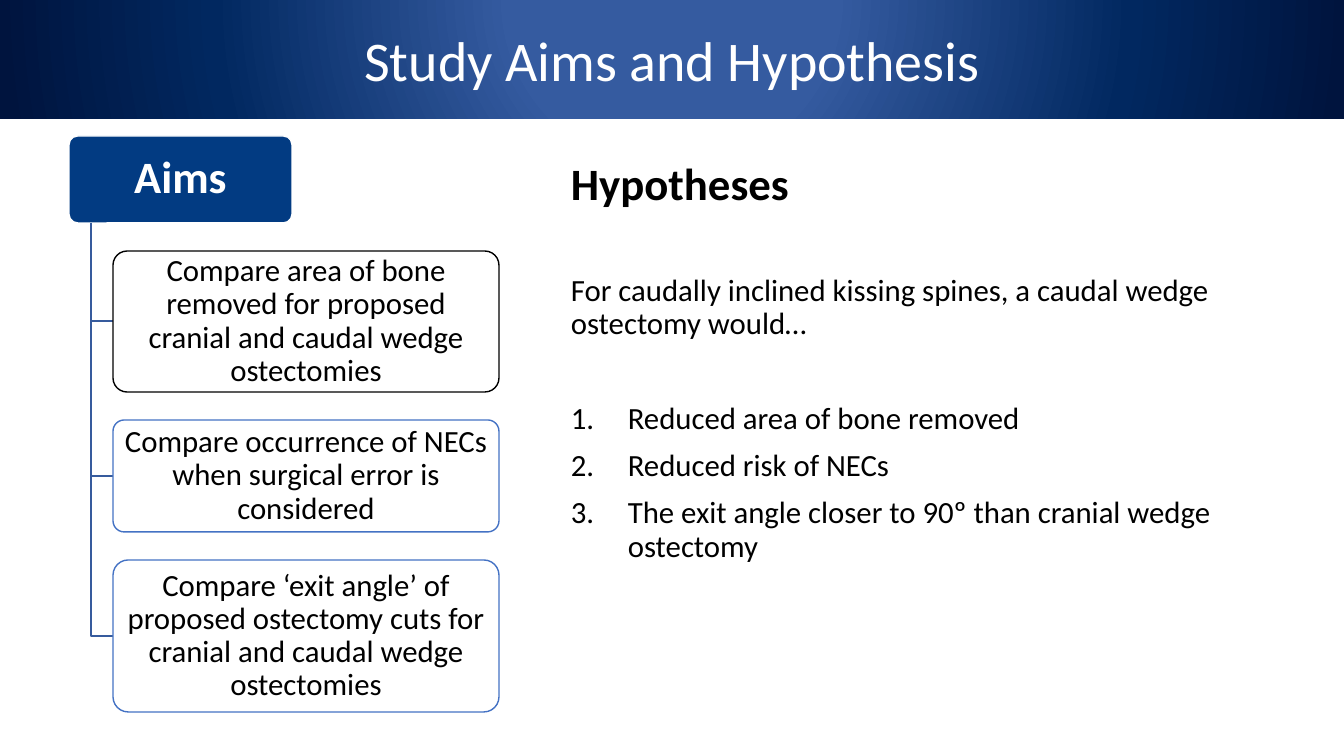
from lxml.etree import SubElement
from pptx import Presentation
from pptx.dml.color import RGBColor
from pptx.enum.shapes import MSO_SHAPE
from pptx.enum.text import MSO_ANCHOR, MSO_AUTO_SIZE, PP_ALIGN
from pptx.oxml import parse_xml
from pptx.oxml.ns import nsdecls, qn
from pptx.util import Pt

WIDE, HIGH = 1344, 756
SCALE = 12192000 / WIDE


def px(n):
    return round(n * SCALE)


def rgb(code):
    return RGBColor.from_string(code)


def put(target, **values):
    for name, value in values.items():
        setattr(target, name, value)


class Board:
    font = "Calibri"
    navy, blue, line = "023B82", "4472C4", "365B9D"
    black, white = "000000", "FFFFFF"
    stops = [(24, "355BA0"), (68, "012860"), (100, "00143E")]

    def __init__(self, deck):
        self.slide = deck.slides.add_slide(deck.slide_layouts[5])
        self.shapes = self.slide.shapes

    def label(self, para, text, size, color, bold=False, **style):
        put(para, **style)
        run = para.add_run()
        run.text = text
        put(run.font, name=self.font, size=Pt(size), bold=bold)
        run.font.color.rgb = rgb(color)

    def title(self, text, height):
        bar = self.shapes.title
        put(bar, left=0, top=0, width=px(WIDE), height=px(height))
        stops = "".join(
            f'<a:gs pos="{pos * 1000}"><a:srgbClr val="{code}"/></a:gs>'
            for pos, code in self.stops)
        bar._element.spPr.append(parse_xml(
            f'<a:gradFill {nsdecls("a")} rotWithShape="1"><a:gsLst>{stops}</a:gsLst>'
            '<a:path path="circle"><a:fillToRect l="50000" t="-80000" r="50000" b="180000"/>'
            '</a:path></a:gradFill>'))
        frame = bar.text_frame
        put(frame, word_wrap=True, auto_size=MSO_AUTO_SIZE.NONE,
            vertical_anchor=MSO_ANCHOR.MIDDLE)
        self.label(frame.paragraphs[0], text, 40, self.white, alignment=PP_ALIGN.CENTER)

    def box(self, text, place, fill, edge, color, size, pad, bold=False, alpha=100):
        card = self.shapes.add_shape(MSO_SHAPE.ROUNDED_RECTANGLE, *map(px, place))
        card.adjustments[0] = 0.1
        card.shadow.inherit = False
        card.fill.solid()
        card.fill.fore_color.rgb = rgb(fill)
        if alpha < 100:
            tint = card._element.spPr.find(qn("a:solidFill"))[0]
            SubElement(tint, qn("a:alpha"), val=str(alpha * 1000))
        card.line.color.rgb = rgb(edge)
        card.line.width = Pt(1)
        side, top = map(px, pad)
        put(card.text_frame, word_wrap=True, vertical_anchor=MSO_ANCHOR.MIDDLE,
            margin_left=side, margin_right=side, margin_top=top, margin_bottom=top)
        self.label(card.text_frame.paragraphs[0], text, size, color, bold,
                   alignment=PP_ALIGN.CENTER, line_spacing=0.9)

    def elbow(self, left, top, right, low):
        pen = self.shapes.build_freeform(left, top, SCALE)
        pen.add_line_segments([(left, low), (right, low)], close=False)
        bend = pen.convert_to_shape()
        bend.shadow.inherit = False
        bend.fill.background()
        bend.line.color.rgb = rgb(self.line)
        bend.line.width = Pt(1)

    def points(self, place, rows, indent):
        frame = self.shapes.add_textbox(*map(px, place)).text_frame
        frame.word_wrap = True
        for i, (text, size, bold, gap, listed) in enumerate(rows):
            para = frame.add_paragraph() if i else frame.paragraphs[0]
            self.label(para, text, size, self.black, bold,
                       line_spacing=0.9, space_before=Pt(gap))
            if listed:
                props = para._p.get_or_add_pPr()
                props.set("marL", str(px(indent)))
                props.set("indent", str(-px(indent)))
                SubElement(props, qn("a:buFont"), typeface="+mj-lt")
                SubElement(props, qn("a:buAutoNum"), type="arabicPeriod")


def main():
    deck = Presentation()
    put(deck, slide_width=px(WIDE), slide_height=px(HIGH))
    board = Board(deck)

    # Title bar
    board.title("Study Aims and Hypothesis", 119)

    # Aims tree: head, then one elbow and one box for each aim
    left, top, high, gap = 69, 136, 87, 28
    board.box("Aims", (left, top, 223, high), board.navy, board.white,
              board.white, 32, (7, 4), bold=True)
    aims = [
        ("Compare area of bone removed for proposed cranial and caudal wedge ostectomies",
         141, board.black, 100),
        ("Compare occurrence of NECs when surgical error is considered",
         112, board.blue, 90),
        ("Compare ‘exit angle’ of proposed ostectomy cuts for cranial and caudal wedge "
         "ostectomies", 152, board.blue, 90),
    ]
    stem, edge, base = left + 22, left + 44, top + high
    y = base + gap
    for text, tall, line, alpha in aims:
        board.elbow(stem, base, edge, y + tall // 2)
        board.box(text, (edge, y, 386, tall), board.white, line,
                  board.black, 22, (5, 3), alpha=alpha)
        y += tall + gap

    # Hypotheses: text, size, bold, space before, numbered
    board.points((561, 157, 746, 599), [
        ("Hypotheses", 32, True, 10, False),
        ("For caudally inclined kissing spines, a caudal wedge ostectomy would…",
         22, False, 46, False),
        ("Reduced area of bone removed", 22, False, 44, True),
        ("Reduced risk of NECs", 22, False, 10, True),
        ("The exit angle closer to 90º than cranial wedge ostectomy", 22, False, 10, True),
    ], 57)

    deck.save("out.pptx")


if __name__ == "__main__":
    main()
